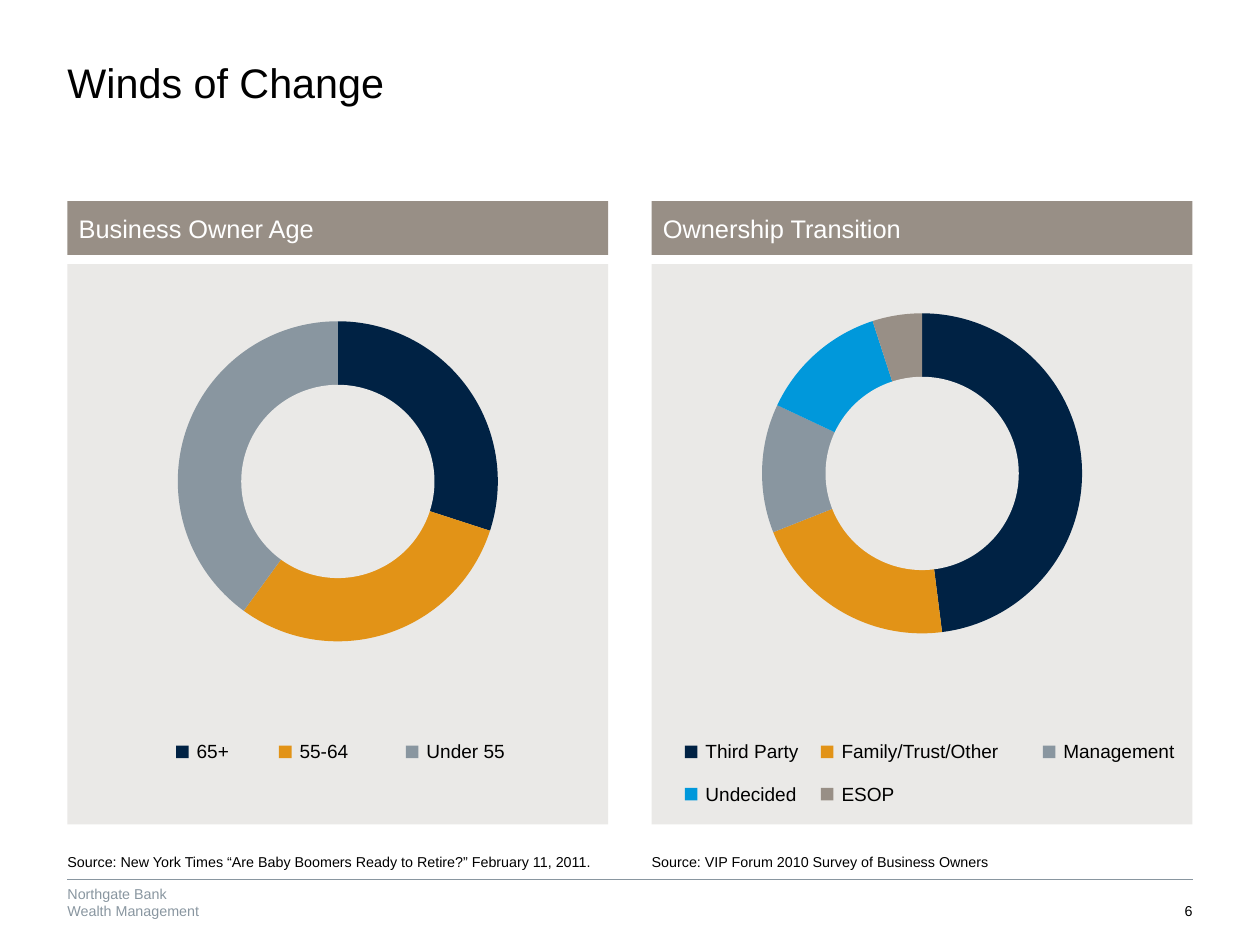
from dataclasses import dataclass

from lxml.etree import SubElement
from pptx import Presentation
from pptx.chart.data import CategoryChartData
from pptx.dml.color import RGBColor
from pptx.enum.chart import XL_CHART_TYPE
from pptx.enum.shapes import MSO_CONNECTOR, MSO_SHAPE
from pptx.enum.text import MSO_ANCHOR, PP_ALIGN
from pptx.oxml import parse_xml
from pptx.oxml.ns import nsdecls, qn
from pptx.util import Inches, Pt


@dataclass(frozen=True)
class Theme:
    font: str = "Arial"
    title: int = 26
    heading: int = 16
    label: int = 12
    small: int = 9
    black: str = "000000"
    white: str = "FFFFFF"
    panel: str = "EAE9E7"
    taupe: str = "988F86"
    gray: str = "8996A0"
    slices: tuple = ("002244", "E29317", "8996A0", "0098DB", "988F86")


@dataclass(frozen=True)
class Box:
    left: float
    top: float
    width: float
    height: float

    def inside(self, left, top, width, height):
        return Box(self.left + left, self.top + top, width, height)

    def lengths(self):
        return [Inches(n) for n in (self.left, self.top, self.width, self.height)]


@dataclass(frozen=True)
class Ring:
    heading: str
    center: float
    values: tuple
    labels: tuple
    source: str


THEME = Theme()
PANEL_LEFTS = (0.59, 5.70)
RING_SIZE = 2.8
HOLE_SIZE = 1.69
CHART_SIZE = 3.5
RINGS = (
    Ring("Business Owner Age", 1.9, (30, 30, 40),
         (("65+", 0.95, 0), ("55-64", 1.85, 0), ("Under 55", 2.96, 0)),
         "Source: New York Times “Are Baby Boomers Ready to Retire?” February 11, 2011."),
    Ring("Ownership Transition", 1.83, (48, 21, 13, 13, 5),
         (("Third Party", 0.29, 0), ("Family/Trust/Other", 1.48, 0),
          ("Management", 3.42, 0), ("Undecided", 0.29, 0.37), ("ESOP", 1.48, 0.37)),
         "Source: VIP Forum 2010 Survey of Business Owners"),
)


def color(value):
    return RGBColor.from_string(value)


def write(frame, lines, size, ink, insets=(0, 0, 0, 0), anchor=MSO_ANCHOR.TOP,
          align=PP_ALIGN.LEFT, wrap=True):
    frame.word_wrap = wrap
    frame.vertical_anchor = anchor
    frame.margin_left, frame.margin_top, frame.margin_right, frame.margin_bottom = [
        Inches(n) for n in insets]
    para = frame.paragraphs[0]
    para.alignment = align
    for index, line in enumerate(lines):
        if index:
            para.add_line_break()
        span = para.add_run()
        span.text = line
        span.font.name = THEME.font
        span.font.size = Pt(size)
        span.font.color.rgb = color(ink)
    return para


def add_text(page, box, lines, size, ink, **options):
    return write(page.shapes.add_textbox(*box.lengths()).text_frame,
                 lines, size, ink, **options)


def add_block(page, box, fill, kind=MSO_SHAPE.RECTANGLE):
    shape = page.shapes.add_shape(kind, *box.lengths())
    shape.shadow.inherit = False
    shape.fill.solid()
    shape.fill.fore_color.rgb = color(fill)
    shape.line.fill.background()
    return shape


def add_ring(page, box, ring):
    data = CategoryChartData()
    data.categories = [label for label, *_ in ring.labels]
    data.add_series(ring.heading, ring.values)
    chart = page.shapes.add_chart(XL_CHART_TYPE.DOUGHNUT, *box.lengths(), data).chart
    chart.has_title = False
    chart.has_legend = False
    chart.font.name = THEME.font
    chart.font.size = Pt(THEME.label)
    chart.font.color.rgb = color(THEME.black)
    plot = chart.plots[0]
    plot.vary_by_categories = True
    plot.has_data_labels = False
    for index in range(len(ring.values)):
        piece = plot.series[0].points[index].format
        piece.fill.solid()
        piece.fill.fore_color.rgb = color(THEME.slices[index])
        piece.line.fill.background()

    area = chart.element.find(".//" + qn("c:plotArea"))
    for old in area.findall(qn("c:layout")):
        area.remove(old)
    layout = parse_xml(f"<c:layout {nsdecls('c')}/>")
    manual = SubElement(layout, qn("c:manualLayout"))
    share = RING_SIZE / box.width
    edge = (1 - share) / 2
    for tag, value in (("layoutTarget", "inner"), ("xMode", "edge"), ("yMode", "edge"),
                       ("x", edge), ("y", edge), ("w", share), ("h", share)):
        SubElement(manual, qn("c:" + tag)).set("val", str(value))
    area.insert(0, layout)
    area.find(".//" + qn("c:holeSize")).set("val", "60")

    inset = (box.width - HOLE_SIZE) / 2
    add_block(page, box.inside(inset, inset, HOLE_SIZE, HOLE_SIZE),
              THEME.panel, MSO_SHAPE.OVAL)


def add_legend(page, box, labels):
    for (label, left, top), fill in zip(labels, THEME.slices):
        add_block(page, box.inside(left, top + 0.05, 0.11, 0.11), fill)
        add_text(page, box.inside(left + 0.18, top, 1.45, 0.2), [label],
                 THEME.label, THEME.black, wrap=False)


def add_panel(page, box, ring):
    heading = add_block(page, box.inside(0, 0, box.width, 0.47), THEME.taupe)
    write(heading.text_frame, [ring.heading], THEME.heading, THEME.white,
          insets=(0.1, 0.1, 0.1, 0.1), anchor=MSO_ANCHOR.MIDDLE)
    body = box.inside(0, 0.55, box.width, 4.9)
    add_block(page, body, THEME.panel)
    add_ring(page, body.inside((body.width - CHART_SIZE) / 2,
                               ring.center - CHART_SIZE / 2, CHART_SIZE, CHART_SIZE), ring)
    add_legend(page, body.inside(0, 4.16, body.width, 0.57), ring.labels)
    add_text(page, box.inside(0, 5.7, box.width, 0.23), [ring.source],
             THEME.small, THEME.black, insets=(0, 0, 0, 0.08), anchor=MSO_ANCHOR.BOTTOM)


def add_title(page, box):
    para = add_text(page, box, ["Winds of Change"], THEME.title, THEME.black)
    para.line_spacing = 0.9


def add_footer(page, box):
    rule = page.shapes.add_connector(
        MSO_CONNECTOR.STRAIGHT, Inches(box.left), Inches(box.top),
        Inches(box.left + box.width), Inches(box.top))
    rule.line.color.rgb = color(THEME.gray)
    rule.line.width = Pt(0.5)
    SubElement(rule._element.spPr, qn("a:effectLst"))
    add_text(page, box.inside(0, 0.01, 1.76, 0.35), ["Northgate Bank", "Wealth Management"],
             THEME.small, THEME.gray, insets=(0, 0.04, 0, 0), wrap=False)
    add_text(page, box.inside(box.width - 0.59, 0.01, 0.59, 0.34), ["6"],
             THEME.small, THEME.black, insets=(0, 0.04, 0, 0),
             anchor=MSO_ANCHOR.BOTTOM, align=PP_ALIGN.RIGHT)


def main():
    deck = Presentation()
    deck.slide_width, deck.slide_height = Inches(11.02), Inches(8.29)
    page = deck.slides.add_slide(deck.slide_layouts[6])
    add_title(page, Box(0.59, 0.55, 9.25, 0.83))
    for left, ring in zip(PANEL_LEFTS, RINGS):
        add_panel(page, Box(left, 1.76, 4.73, 5.93), ring)
    add_footer(page, Box(0.59, 7.69, 9.84, 0.36))
    deck.save("out.pptx")


if __name__ == "__main__":
    main()
